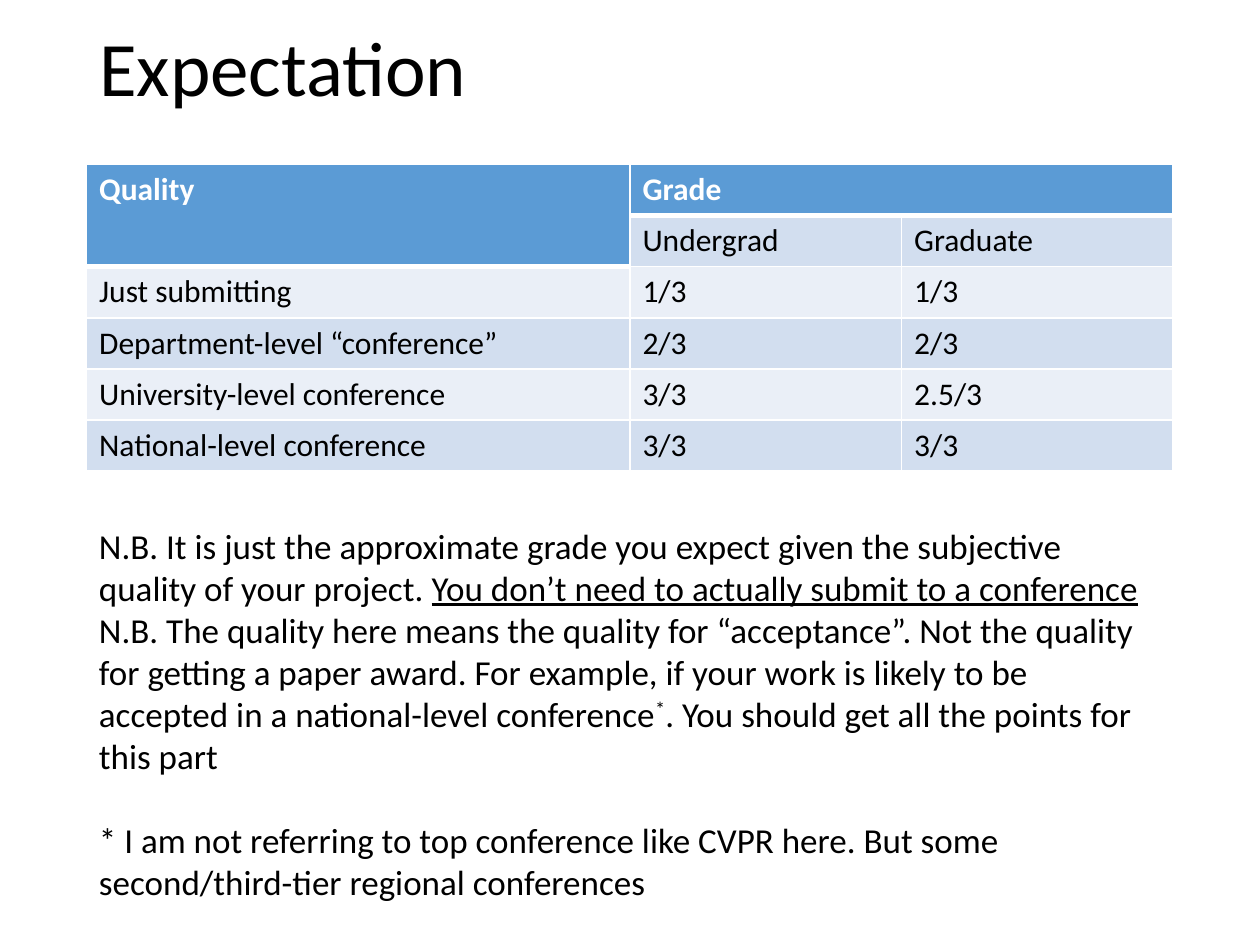
from lxml.etree import SubElement as Sub
from pptx import Presentation as Deck
from pptx.dml.color import RGBColor as Rgb
from pptx.enum.text import MSO_ANCHOR as Anchor, MSO_AUTO_SIZE as Auto, PP_ALIGN as Align
from pptx.oxml.ns import qn
from pptx.util import Pt

LEFT, WIDTH = 49.5, 621
BLACK, WHITE, BLUE = "000000", "FFFFFF", "5B9BD5"
BANDS = ["D2DEEF", "EAEFF7"]
ROWS = [
    ["Quality", "Grade", ""],
    ["", "Undergrad", "Graduate"],
    ["Just submitting", "1/3", "1/3"],
    ["Department-level “conference”", "2/3", "2/3"],
    ["University-level conference", "3/3", "2.5/3"],
    ["National-level conference", "3/3", "3/3"],
]
NOTES = [
    [("N.B. It is just the approximate grade you expect given the subjective "
      "quality of your project. ", ""),
     ("You don’t need to actually submit to a conference", "under")],
    [("N.B. The quality here means the quality for “acceptance”. Not the quality "
      "for getting a paper award. For example, if your work is likely to be "
      "accepted in a national-level conference", ""),
     ("*", "super"),
     (". You should get all the points for this part", "")],
    [("* I am not referring to top conference like CVPR here. But some "
      "second/third-tier regional conferences", "")],
]


def tint(code):
    return Rgb.from_string(code)


class Page:
    font = "Calibri"

    def __init__(self, deck):
        self.slide = deck.slides.add_slide(deck.slide_layouts[5])

    def run(self, para, text, size, color=BLACK, bold=False, mark=""):
        run = para.add_run()
        run.text = text
        font = run.font
        font.name, font.size, font.bold = self.font, Pt(size), bold
        font.color.rgb = tint(color)
        if mark == "under":
            font.underline = True
        if mark == "super":
            font._element.set("baseline", "30000")

    def title(self, text, top, height):
        shape = self.slide.shapes.title
        shape.left, shape.top = Pt(LEFT), Pt(top)
        shape.width, shape.height = Pt(WIDTH), Pt(height)
        frame = shape.text_frame
        frame.auto_size = Auto.NONE
        frame.vertical_anchor = Anchor.MIDDLE
        para = frame.paragraphs[0]
        para.alignment, para.line_spacing = Align.LEFT, 0.9
        self.run(para, text, 44)

    def edge(self, cell, side, width):
        line = Sub(cell._tc.get_or_add_tcPr(), qn("a:ln" + side), w=str(Pt(width)))
        Sub(Sub(line, qn("a:solidFill")), qn("a:srgbClr"), val=WHITE)

    def cell(self, cell, text, head, fill, thick):
        for side in "LRTB":
            self.edge(cell, side, 3 if side in thick else 1)
        cell.fill.solid()
        cell.fill.fore_color.rgb = tint(fill)
        if text:
            para = cell.text_frame.paragraphs[0]
            self.run(para, text, 18, WHITE if head else BLACK, head)

    def table(self, rows, top, cols, high):
        shape = self.slide.shapes.add_table(
            len(rows), len(cols), Pt(LEFT), Pt(top), Pt(WIDTH), Pt(high * len(rows)))
        grid = shape.table
        for col, wide in zip(grid.columns, cols):
            col.width = Pt(wide)
        for i, row in enumerate(rows):
            grid.rows[i].height = Pt(high)
            for j, text in enumerate(row):
                last = 1 if j == 0 else 0
                head = i <= last
                thick = "B" if i == last else "T" if i == last + 1 else ""
                fill = BLUE if head else BANDS[(i + 1) % 2]
                self.cell(grid.cell(i, j), text, head, fill, thick)
        grid.cell(0, 0).merge(grid.cell(1, 0))
        grid.cell(0, 1).merge(grid.cell(0, 2))

    def notes(self, paras, top, height):
        box = self.slide.shapes.add_textbox(Pt(LEFT), Pt(top), Pt(WIDTH), Pt(height))
        frame = box.text_frame
        frame.word_wrap = True
        for i, runs in enumerate(paras):
            para = frame.add_paragraph() if i else frame.paragraphs[0]
            for text, mark in runs:
                self.run(para, text, 20, mark=mark)
        para.space_before = Pt(24)


def main():
    deck = Deck()
    deck.slide_width, deck.slide_height = Pt(720), Pt(540)
    page = Page(deck)
    page.title("Expectation", 0.5, 80.5)
    page.table(ROWS, 94, [WIDTH / 2, WIDTH / 4, WIDTH / 4], 29.1)
    page.notes(NOTES, 296, 225.5)
    deck.save("out.pptx")


if __name__ == "__main__":
    main()
